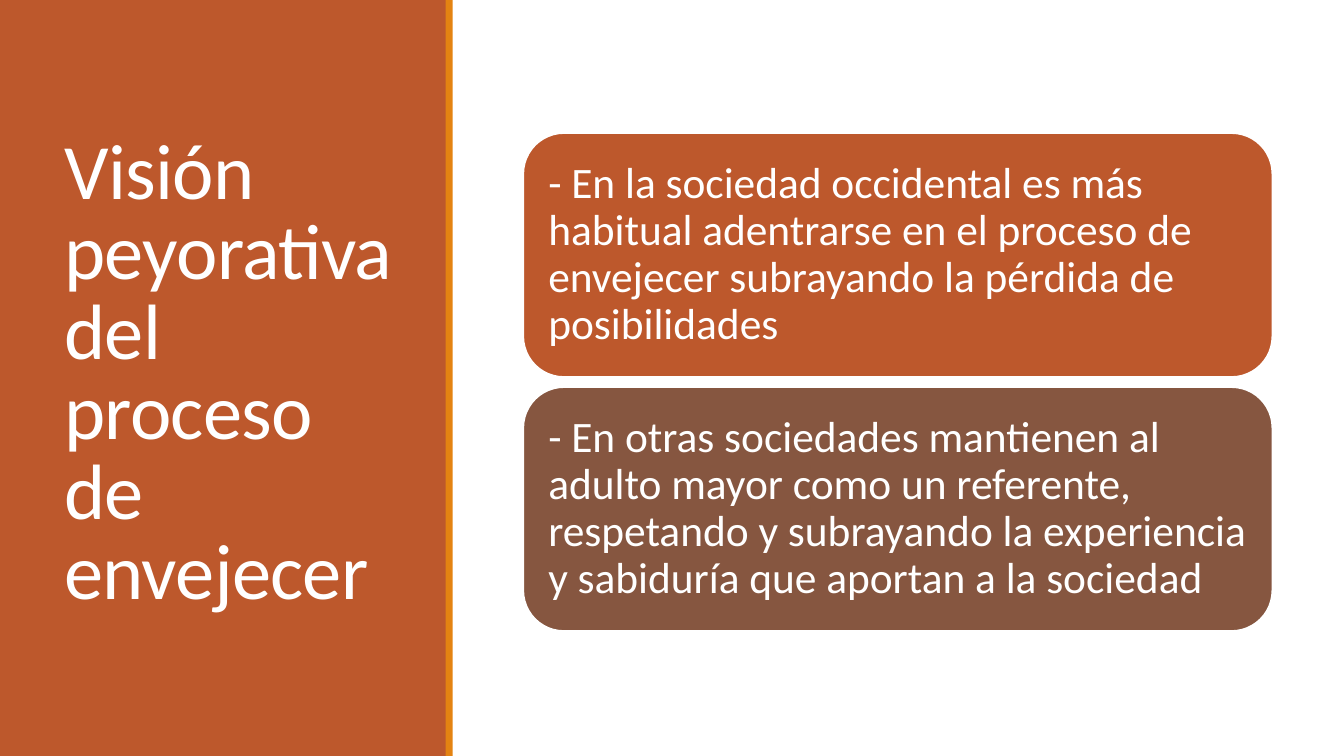
from dataclasses import dataclass

from pptx import Presentation
from pptx.dml.color import RGBColor
from pptx.enum.shapes import MSO_SHAPE
from pptx.enum.text import MSO_ANCHOR, PP_ALIGN
from pptx.util import Inches, Pt

RECTANGLE = MSO_SHAPE.RECTANGLE
ROUNDED = MSO_SHAPE.ROUNDED_RECTANGLE
MIDDLE = MSO_ANCHOR.MIDDLE
LEFT = PP_ALIGN.LEFT


@dataclass(frozen=True)
class Theme:
    font: str = "Calibri"
    title_size: float = 56
    card_size: float = 31
    white: str = "FFFFFF"
    rust: str = "BD582C"
    orange: str = "E48312"
    brown: str = "865640"


theme = Theme()

presentation = Presentation()
presentation.slide_width = Inches(13.33)
presentation.slide_height = Inches(7.5)
slide = presentation.slides.add_slide(presentation.slide_layouts[6])


def add_block(kind, left, top, width, height, color):
    shape = slide.shapes.add_shape(
        kind, Inches(left), Inches(top), Inches(width), Inches(height))
    shape.shadow.inherit = False
    shape.fill.solid()
    shape.fill.fore_color.rgb = RGBColor.from_string(color)
    shape.line.fill.background()
    return shape


def write_text(shape, text, size, line_spacing):
    frame = shape.text_frame
    frame.text = text
    frame.word_wrap = True
    frame.vertical_anchor = MIDDLE
    paragraph = frame.paragraphs[0]
    paragraph.alignment = LEFT
    paragraph.line_spacing = line_spacing
    font = paragraph.runs[0].font
    font.name = theme.font
    font.size = Pt(size)
    font.color.rgb = RGBColor.from_string(theme.white)
    return paragraph


# Side panel with its accent stripe
add_block(RECTANGLE, 0, 0, 4.43, 7.5, theme.rust)
add_block(RECTANGLE, 4.42, 0, 0.07, 7.5, theme.orange)

# Title, with slightly tightened letter spacing
title = slide.shapes.add_textbox(
    Inches(0.54), Inches(0.57), Inches(3.54), Inches(6.31))
title_paragraph = write_text(
    title, "Visión peyorativa del proceso de envejecer", theme.title_size, 0.85)
title_paragraph.runs[0].font._element.set("spc", "-50")

# Stacked cards
cards = [
    (theme.rust, "- En la sociedad occidental es más habitual adentrarse en el "
                 "proceso de envejecer subrayando la pérdida de posibilidades"),
    (theme.brown, "- En otras sociedades mantienen al adulto mayor como un "
                  "referente, respetando y subrayando la experiencia y "
                  "sabiduría que aportan a la sociedad"),
]
card_top, card_height, card_gap = 1.32, 2.42, 0.1
for index, (color, text) in enumerate(cards):
    top = card_top + index * (card_height + card_gap)
    card = add_block(ROUNDED, 5.19, top, 7.43, card_height, color)
    card.line.color.rgb = RGBColor.from_string(theme.white)
    card.line.width = Pt(1.25)
    frame = card.text_frame
    frame.margin_left = frame.margin_top = frame.margin_bottom = Inches(0.13)
    frame.margin_right = Inches(0.1)
    write_text(card, text, theme.card_size, 0.9)

presentation.save("out.pptx")
